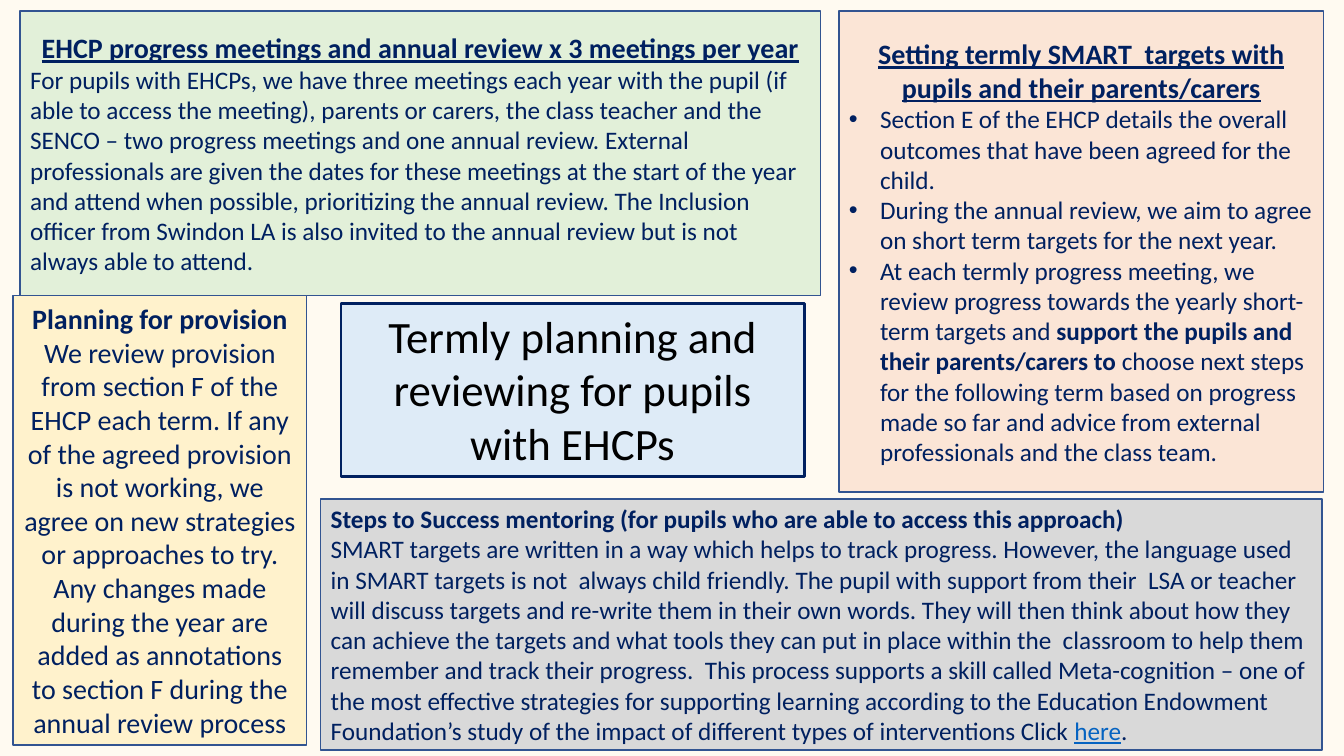
from lxml.etree import SubElement
from pptx import Presentation
from pptx.dml.color import RGBColor
from pptx.enum.shapes import MSO_SHAPE
from pptx.enum.text import MSO_ANCHOR, PP_ALIGN
from pptx.oxml.ns import qn
from pptx.util import Inches, Pt

CREAM = RGBColor(0xFF, 0xFA, 0xF1)
GREEN = RGBColor(0xE2, 0xF0, 0xD9)
PEACH = RGBColor(0xFB, 0xE5, 0xD6)
GREY = RGBColor(0xD9, 0xD9, 0xD9)
YELLOW = RGBColor(0xFF, 0xF2, 0xCC)
PALE_BLUE = RGBColor(0xDE, 0xEB, 0xF7)
BORDER_BLUE = RGBColor(0x32, 0x54, 0x91)
NAVY = RGBColor(0x00, 0x20, 0x60)
LINK_BLUE = RGBColor(0x05, 0x63, 0xC1)
BLACK = RGBColor(0, 0, 0)


def add_run(paragraph, text, size=18, color=NAVY, bold=False, underline=False):
    """Add formatted text to a paragraph."""
    run = paragraph.add_run()
    run.text = text
    font = run.font
    font.name, font.size = "Calibri", Pt(size)
    font.bold, font.underline = bold, underline
    font.color.rgb = color


class PlanningSlide:
    """Hold the slide and draw panels placed in percentages of its size."""

    def __init__(self, presentation):
        """Add a blank slide with a cream background."""
        self.width = presentation.slide_width
        self.height = presentation.slide_height
        self.slide = presentation.slides.add_slide(presentation.slide_layouts[6])
        background = self.slide.background.fill
        background.solid()
        background.fore_color.rgb = CREAM

    def panel(self, left, top, width, height, fill, line=BORDER_BLUE, weight=1,
              anchor=MSO_ANCHOR.MIDDLE):
        """Draw a bordered panel and return its text frame."""
        shape = self.slide.shapes.add_shape(
            MSO_SHAPE.RECTANGLE,
            round(self.width * left / 100), round(self.height * top / 100),
            round(self.width * width / 100), round(self.height * height / 100))
        shape.shadow.inherit = False
        shape.fill.solid()
        shape.fill.fore_color.rgb = fill
        shape.line.color.rgb = line
        shape.line.width = Pt(weight)
        frame = shape.text_frame
        frame.word_wrap = True
        frame.vertical_anchor = anchor
        return frame

    def paragraph(self, frame, *texts, align=PP_ALIGN.LEFT, bullet=False, **style):
        """Write a paragraph of plain texts and (text, format) pairs."""
        first = frame.paragraphs[0]
        paragraph = frame.add_paragraph() if first.runs else first
        paragraph.alignment = align
        if bullet:
            properties = paragraph._p.get_or_add_pPr()
            properties.set("marL", str(Inches(0.31)))
            properties.set("indent", str(-Inches(0.31)))
            SubElement(properties, qn("a:buFont"), typeface="Arial")
            SubElement(properties, qn("a:buChar"), char="•")
        for item in texts:
            text, changes = (item, {}) if isinstance(item, str) else item
            add_run(paragraph, text, **{**style, **changes})

    def heading(self, frame, text, **style):
        """Write a bold centred heading."""
        self.paragraph(frame, text, align=PP_ALIGN.CENTER, size=20, bold=True, **style)


def main():
    """Build and save the slide."""
    presentation = Presentation()
    presentation.slide_width = Inches(13.33)
    presentation.slide_height = Inches(7.5)
    page = PlanningSlide(presentation)

    meetings = page.panel(1.5, 1.47, 59.56, 37.6, GREEN)
    page.heading(meetings, "EHCP progress meetings and annual review x 3 meetings per year",
                 underline=True)
    page.paragraph(
        meetings,
        "For pupils with EHCPs, we have three meetings each year with the pupil (if able to "
        "access the meeting), parents or carers, the class teacher and the SENCO – two progress "
        "meetings and one annual review. External professionals are given the dates for these "
        "meetings at the start of the year and attend when possible, prioritizing the annual "
        "review. The Inclusion officer from Swindon LA is also invited to the annual review but "
        "is not always able to attend.")

    targets = page.panel(62.42, 1.47, 36.08, 63.6, PEACH)
    page.heading(targets, "Setting termly SMART  targets with pupils and their parents/carers",
                 underline=True)
    target_points = [
        ["Section E of the EHCP details the overall outcomes that have been agreed for the child."],
        ["During the annual review, we aim to agree on short term targets for the next year."],
        ["At each termly progress meeting, we review progress towards the yearly short-term "
         "targets and ",
         ("support the pupils and their parents/carers to ", {"bold": True}),
         "choose next steps for the following term based on progress made so far and advice "
         "from external professionals and the class team."],
    ]
    for point in target_points:
        page.paragraph(targets, *point, bullet=True)

    mentoring = page.panel(23.86, 66, 74.49, 33.2, GREY)
    page.paragraph(
        mentoring,
        "Steps to Success mentoring (for pupils who are able to access this approach)",
        bold=True)
    page.paragraph(
        mentoring,
        "SMART targets are written in a way which helps to track progress. However, the language "
        "used in SMART targets is not  always child friendly. The pupil with support from their  "
        "LSA or teacher will discuss targets and re-write them in their own words. They will then "
        "think about how they can achieve the targets and what tools they can put in place within "
        "the  classroom to help them remember and track their progress.  This process supports a "
        "skill called Meta-cognition – one of the most effective strategies for supporting "
        "learning according to the Education Endowment Foundation’s study of the impact of "
        "different types of interventions Click ",
        ("here", {"color": LINK_BLUE, "underline": True}),
        ".")

    provision = page.panel(0.98, 39.07, 21.83, 59.47, YELLOW)
    page.heading(provision, "Planning for provision")
    page.paragraph(
        provision,
        "We review provision from section F of the EHCP each term. If any of the agreed provision "
        "is not working, we agree on new strategies or approaches to try. Any changes made during "
        "the year are added as annotations to section F during the annual review process",
        align=PP_ALIGN.CENTER, size=20)

    title = page.panel(25.36, 40.13, 34.51, 22.93, PALE_BLUE, line=NAVY, weight=1.75,
                       anchor=MSO_ANCHOR.TOP)
    page.paragraph(title, "Termly planning and reviewing for pupils with EHCPs",
                   align=PP_ALIGN.CENTER, size=32, color=BLACK)

    presentation.save("out.pptx")


if __name__ == "__main__":
    main()
